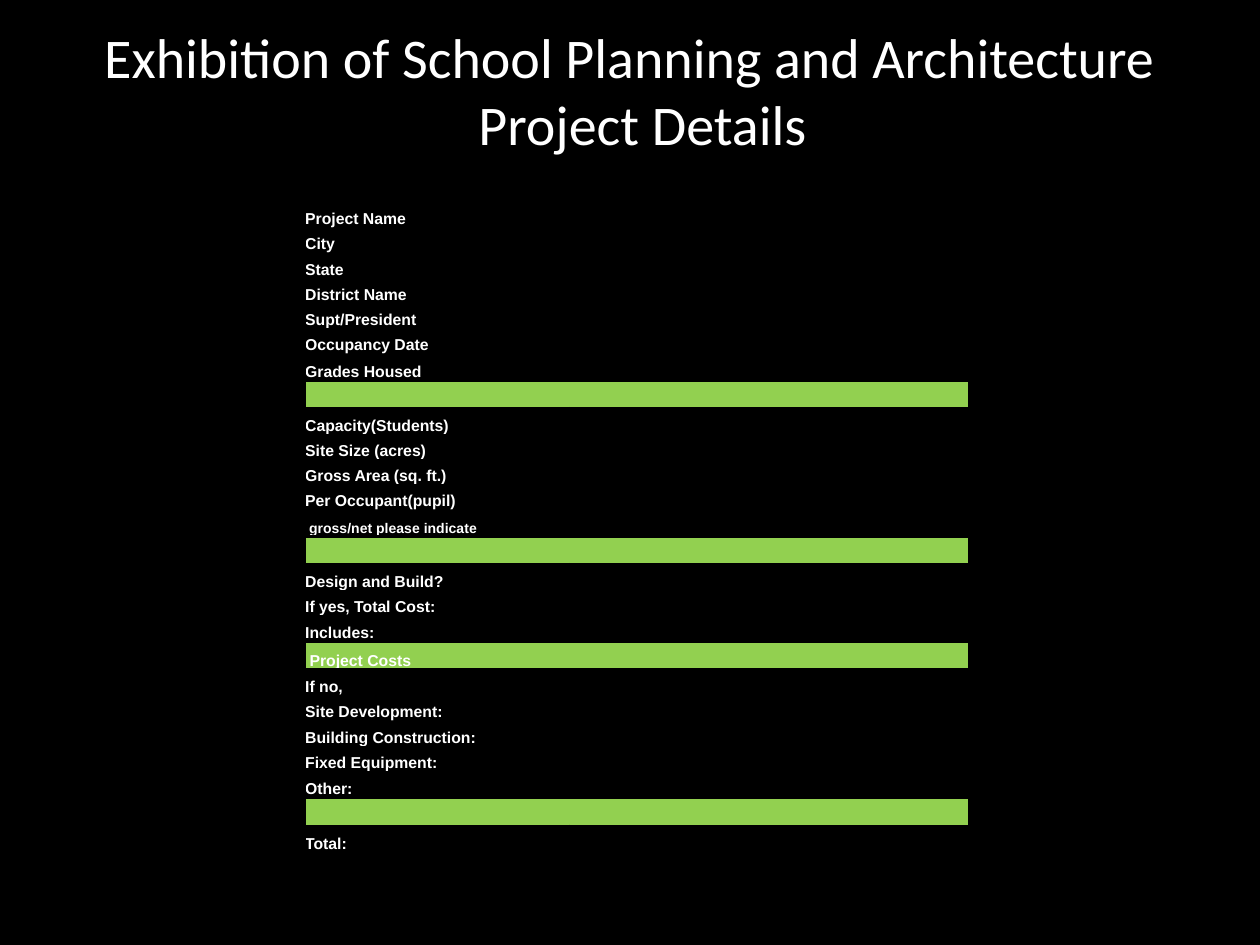
import dataclasses

import lxml.etree
import pptx
import pptx.dml.color
import pptx.enum.text
import pptx.oxml.ns
import pptx.util

Pt = pptx.util.Pt
qn = pptx.oxml.ns.qn


@dataclasses.dataclass(frozen=True)
class Theme:
    back: str = "000000"
    text: str = "FFFFFF"
    band: str = "92D050"
    head_font: str = "Calibri"
    body_font: str = "Arial"
    head: int = 32
    head_end: int = 40
    body: int = 9
    note: int = 8
    thick: float = 1.5
    thin: float = 0.5


THEME = Theme()
TITLE = ["Exhibition of School Planning and Architecture", "\u00a0 Project Details", ""]
NOTE = " gross/net please indicate"
SECTIONS = [
    ["Project Name", "City", "State", "District Name", "Supt/President",
     "Occupancy Date", "Grades Housed"],
    ["Capacity(Students)", "Site Size (acres)", "Gross Area (sq. ft.)",
     "Per Occupant(pupil)", NOTE],
    ["Design and Build?", "If yes, Total Cost:", "Includes:"],
    ["If no,", "Site Development:", "Building Construction:",
     "Fixed Equipment:", "Other:"],
    ["Total:"],
]
BANDS = ["", "", "\u00a0Project Costs", ""]
ROW, EDGE, BAND, FIRST = 14.4, 15.1, 15.8, 22.3


def color(code):
    return pptx.dml.color.RGBColor.from_string(code)


def write(par, text, font, size, bold=False):
    run = par.add_run()
    run.text = text
    run.font.name = font
    run.font.size = Pt(size)
    run.font.bold = bold
    run.font.color.rgb = color(THEME.text)


def end_size(par, size):
    """Set the type size of an empty last line."""
    end = lxml.etree.SubElement(par._p, qn("a:endParaRPr"))
    end.set("sz", str(size * 100))


def add_title(slide, box):
    title = slide.shapes.title
    title.left, title.top, title.width, title.height = map(Pt, box)
    frame = title.text_frame
    frame.word_wrap = True
    frame.auto_size = pptx.enum.text.MSO_AUTO_SIZE.NONE
    frame.vertical_anchor = pptx.enum.text.MSO_ANCHOR.MIDDLE
    par = frame.paragraphs[0]
    par.alignment = pptx.enum.text.PP_ALIGN.CENTER
    for index, line in enumerate(TITLE):
        if index:
            par.add_line_break()
        if line:
            write(par, line, THEME.head_font, THEME.head)
    for mark in par._p.findall(qn("a:br")):
        props = lxml.etree.SubElement(mark, qn("a:rPr"))
        props.set("sz", str(THEME.head * 100))
    end_size(par, THEME.head_end)


def add_lines(cell, widths):
    """Draw the left, right, top and bottom borders."""
    props = cell._tc.get_or_add_tcPr()
    for side, width in zip("LRTB", widths):
        line = lxml.etree.SubElement(props, qn("a:ln" + side), w=str(Pt(width)))
        fill = lxml.etree.SubElement(line, qn("a:solidFill"))
        lxml.etree.SubElement(fill, qn("a:srgbClr"), val=THEME.back)


def fill_cell(cell, text, widths, band=False):
    cell.margin_left = cell.margin_right = 0
    cell.margin_top = cell.margin_bottom = 0
    cell.vertical_anchor = pptx.enum.text.MSO_ANCHOR.BOTTOM
    add_lines(cell, widths)
    if band:
        cell.fill.solid()
        cell.fill.fore_color.rgb = color(THEME.band)
    else:
        cell.fill.background()
    par = cell.text_frame.paragraphs[0]
    if text:
        size = THEME.note if text == NOTE else THEME.body
        write(par, text, THEME.body_font, size, True)
    else:
        end_size(par, THEME.body)


def plan_rows():
    """List each row as label, height, top line, bottom line and band flag."""
    rows = []
    for index, labels in enumerate(SECTIONS):
        last = len(labels) - 1
        for place, label in enumerate(labels):
            edge = place in (0, last)
            rows.append((label, EDGE if edge else ROW,
                         THEME.thin if place else THEME.thick,
                         THEME.thick if place == last else THEME.thin, False))
        if index < len(BANDS):
            rows.append((BANDS[index], BAND, THEME.thick, THEME.thick, True))
    rows[0] = (rows[0][0], FIRST, *rows[0][2:])
    rows[-1] = (rows[-1][0], BAND, *rows[-1][2:])
    return rows


def add_form(slide, box, columns):
    rows = plan_rows()
    table = slide.shapes.add_table(len(rows), len(columns), *map(Pt, box)).table
    table.first_row = table.horz_banding = False
    for column, width in zip(table.columns, columns):
        column.width = Pt(width)
    for index, (label, height, top, bottom, band) in enumerate(rows):
        table.rows[index].height = Pt(height)
        left, right = table.cell(index, 0), table.cell(index, 1)
        if band:
            left.merge(right)
        inner = THEME.thick if band else THEME.thin
        fill_cell(left, label, (THEME.thick, inner, top, bottom), band)
        fill_cell(right, "", (inner, THEME.thick, top, bottom), band)


def main():
    deck = pptx.Presentation()
    deck.slide_width, deck.slide_height = Pt(720), Pt(540)
    slide = deck.slides.add_slide(deck.slide_layouts.get_by_name("Title Only"))
    slide.background.fill.solid()
    slide.background.fill.fore_color.rgb = color(THEME.back)
    add_title(slide, (36, 42, 648, 66))
    add_form(slide, (174.4, 108, 379.4, 381), (151.2, 228.2))
    deck.save("out.pptx")


if __name__ == "__main__":
    main()
